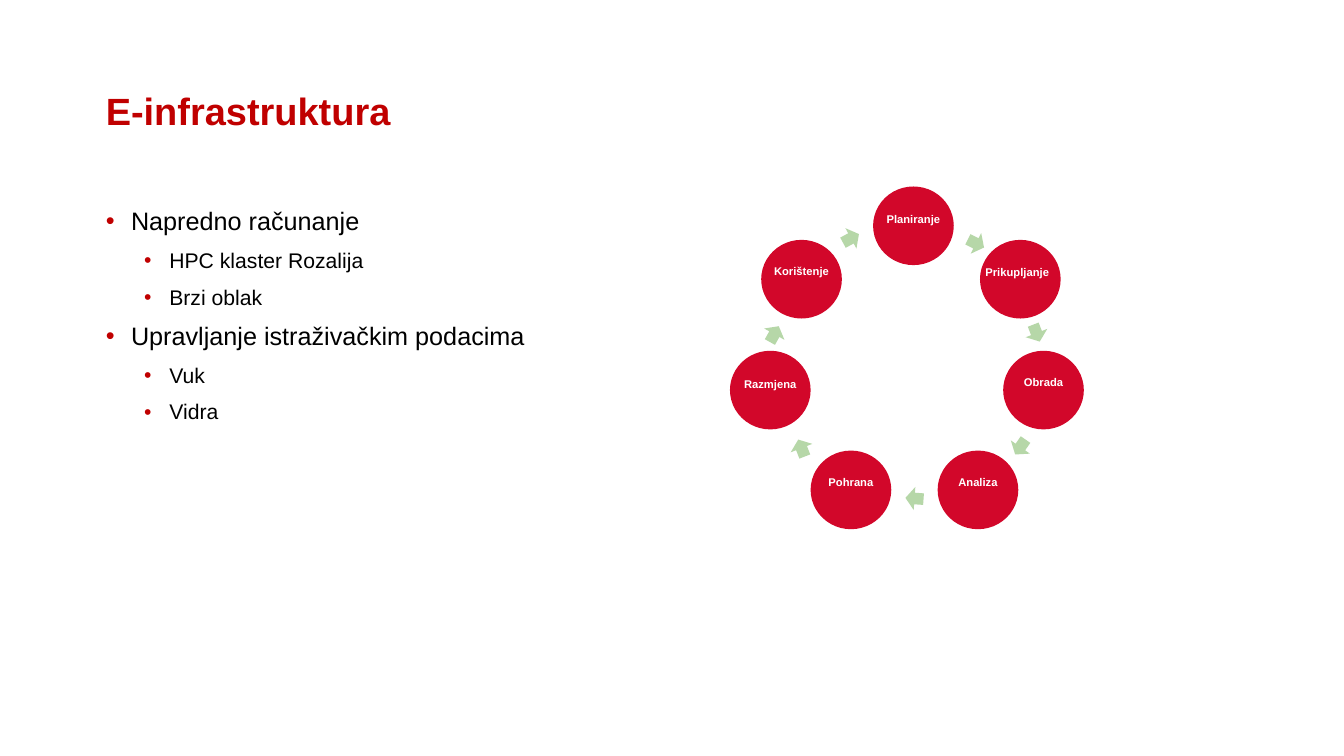
from typing import NamedTuple

from lxml.etree import SubElement
from pptx import Presentation
from pptx.dml.color import RGBColor
from pptx.enum.shapes import MSO_SHAPE as Kind
from pptx.enum.text import MSO_ANCHOR as Anchor, PP_ALIGN as Align
from pptx.oxml.ns import qn
from pptx.util import Inches, Pt

RED, DISC, GREEN = "C00000", "D2072A", "B6D7A8"
BLACK, WHITE = "000000", "FFFFFF"
FONT = "Arial"
DISC_W, DISC_H = 0.8, 0.78
ARROW_W, ARROW_H = 0.18, 0.23


class Stage(NamedTuple):
    name: str
    left: float
    top: float
    dx: float = 0
    dy: float = 0.18


class Arrow(NamedTuple):
    left: float
    top: float
    angle: float


class Point(NamedTuple):
    text: str
    level: int = 0


STAGES = [
    Stage("Planiranje", 8.66, 1.85, dy=0.19),
    Stage("Prikupljanje", 9.72, 2.38, dx=-0.03, dy=0.19),
    Stage("Obrada", 9.95, 3.48),
    Stage("Analiza", 9.3, 4.47),
    Stage("Pohrana", 8.04, 4.47),
    Stage("Razmjena", 7.24, 3.48, dy=0.2),
    Stage("Korištenje", 7.55, 2.38),
]
ARROWS = [
    Arrow(9.59, 2.3, 26.9),
    Arrow(10.19, 3.19, 68.9),
    Arrow(10.03, 4.32, 124.8),
    Arrow(8.98, 4.83, 184.1),
    Arrow(7.86, 4.33, 248.8),
    Arrow(7.59, 3.2, 299.3),
    Arrow(8.35, 2.25, 331.6),
]
POINTS = [
    Point("Napredno računanje"),
    Point("HPC klaster Rozalija", 1),
    Point("Brzi oblak", 1),
    Point("Upravljanje istraživačkim podacima"),
    Point("Vuk", 1),
    Point("Vidra", 1),
]


def color(code: str) -> RGBColor:
    return RGBColor.from_string(code)


def add_box(slide, left: float, top: float, width: float, height: float,
            pad_x: float = 0.13, pad_y: float = 0.07, anchor=Anchor.TOP):
    """Add an empty wrapping text box and return its text frame."""
    box = slide.shapes.add_textbox(*map(Inches, (left, top, width, height)))
    frame = box.text_frame
    frame.word_wrap = True
    frame.vertical_anchor = anchor
    frame.margin_left = frame.margin_right = Inches(pad_x)
    frame.margin_top = frame.margin_bottom = Inches(pad_y)
    return frame


def write(para, text: str, size: float, ink: str, bold: bool = False,
          align=Align.LEFT, spacing: float = 1.0) -> None:
    para.alignment = align
    para.line_spacing = spacing
    run = para.add_run()
    run.text = text
    font = run.font
    font.name, font.size, font.bold = FONT, Pt(size), bold
    font.color.rgb = color(ink)


def add_bullet(para, indent: float) -> None:
    props = para._p.get_or_add_pPr()
    props.set("marL", str(Inches(indent)))
    props.set("indent", str(Inches(-0.25)))
    tint = SubElement(props, qn("a:buClr"))
    SubElement(tint, qn("a:srgbClr"), val=RED)
    SubElement(props, qn("a:buFont"), typeface=FONT)
    SubElement(props, qn("a:buChar"), char="•")


def add_form(slide, kind, left: float, top: float, width: float,
             height: float, fill: str, angle: float = 0) -> None:
    form = slide.shapes.add_shape(
        kind, *map(Inches, (left, top, width, height)))
    form.shadow.inherit = False
    form.fill.solid()
    form.fill.fore_color.rgb = color(fill)
    form.line.fill.background()
    form.rotation = angle


def add_points(slide) -> None:
    frame = add_box(slide, 0.92, 2, 11.5, 4.76)
    for i, point in enumerate(POINTS):
        para = frame.add_paragraph() if i else frame.paragraphs[0]
        para.level = point.level
        add_bullet(para, 0.63 if point.level else 0.25)
        if i:
            para.space_before = Pt(10)
        write(para, point.text, 15.1 if point.level else 18, BLACK,
              spacing=0.9)


def add_cycle(slide) -> None:
    for stage in STAGES:
        add_form(slide, Kind.OVAL, stage.left, stage.top, DISC_W, DISC_H, DISC)
    for arrow in ARROWS:
        add_form(slide, Kind.RIGHT_ARROW, arrow.left, arrow.top,
                 ARROW_W, ARROW_H, GREEN, arrow.angle)
    for stage in STAGES:
        frame = add_box(slide, stage.left + stage.dx, stage.top + stage.dy,
                        DISC_W, 0.4, pad_x=0.05, pad_y=0.13)
        write(frame.paragraphs[0], stage.name, 8, WHITE, bold=True,
              align=Align.CENTER)


def main() -> None:
    deck = Presentation()
    deck.slide_width, deck.slide_height = Inches(13.33), Inches(7.5)
    slide = deck.slides.add_slide(deck.slide_layouts[6])
    title = add_box(slide, 0.92, 0.4, 11.5, 1.45, anchor=Anchor.MIDDLE)
    write(title.paragraphs[0], "E-infrastruktura", 27.1, RED, bold=True,
          spacing=0.9)
    add_points(slide)
    add_cycle(slide)
    deck.save("out.pptx")


if __name__ == "__main__":
    main()
